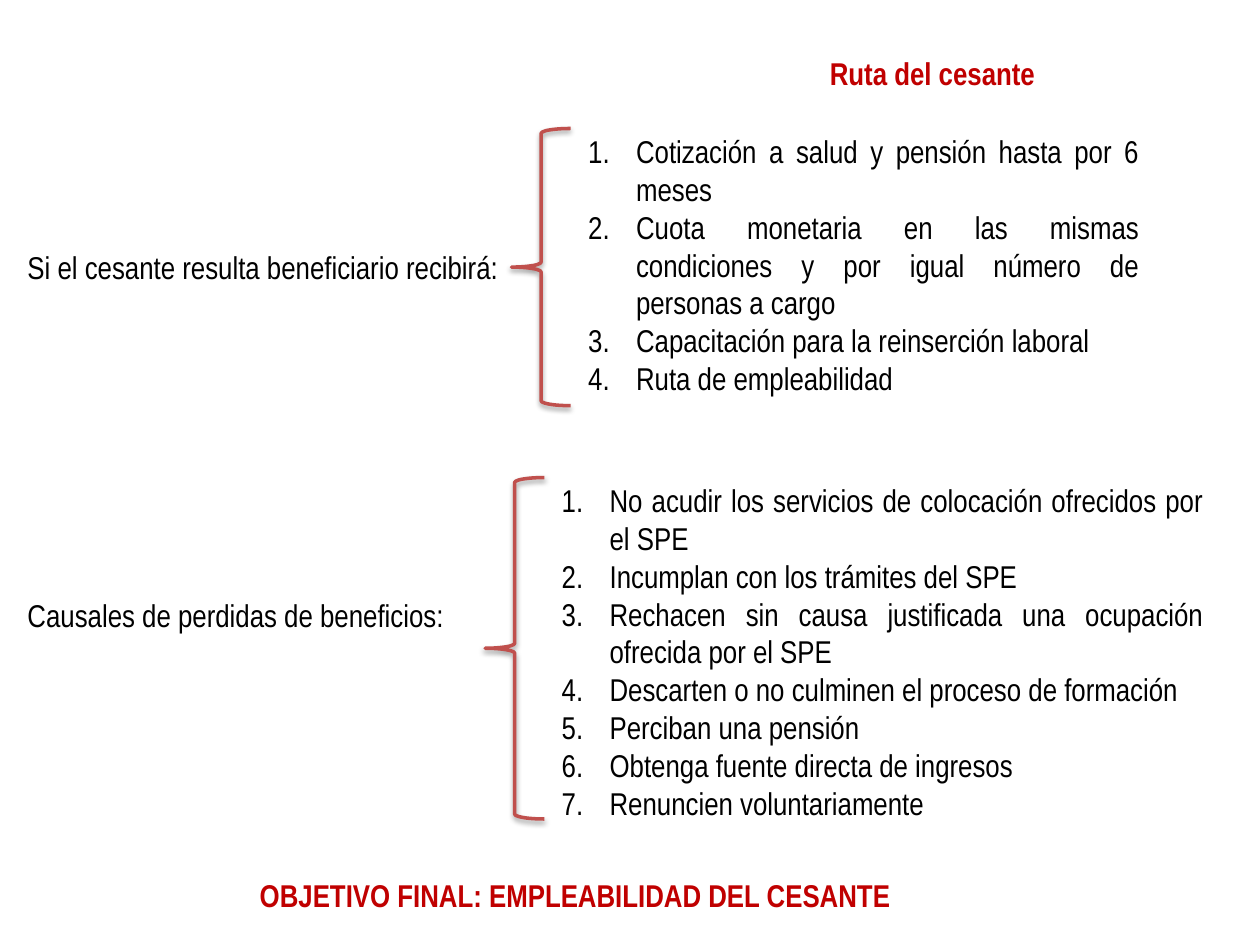
from dataclasses import dataclass

from lxml.etree import SubElement
from pptx import Presentation
from pptx.dml.color import RGBColor
from pptx.enum.shapes import MSO_SHAPE
from pptx.enum.text import MSO_AUTO_SIZE, PP_ALIGN
from pptx.oxml.ns import qn
from pptx.util import Inches, Pt


@dataclass(frozen=True)
class Theme:
    font: str = "Arial Narrow"
    size: float = 18
    ink: str = "000000"
    accent: str = "C00000"
    brace: str = "C0504D"
    brace_width: float = 2
    shadow: str = "000000"


@dataclass(frozen=True)
class Box:
    """Place on the slide, in grid columns and rows."""
    left: float
    top: float
    width: float
    height: float

    def inches(self):
        return [Inches(value * CELL)
                for value in (self.left, self.top, self.width, self.height)]


THEME = Theme()
CELL = 0.1  # inches
COLUMNS, ROWS = 100, 75
LINE_HEIGHT = 4  # rows of a one-line text
BRACE_WIDTH = 4.7
LABEL_LEFT, LABEL_WIDTH = 1.2, 41.7
INDENT = Inches(0.38)

BENEFITS = [
    "Cotización a salud y pensión hasta por 6 meses",
    "Cuota monetaria en las mismas condiciones y por igual número de personas a cargo",
    "Capacitación para la reinserción laboral",
    "Ruta de empleabilidad",
]
CAUSES = [
    "No acudir los servicios de colocación ofrecidos por el SPE",
    "Incumplan con los trámites del SPE",
    "Rechacen sin causa justificada una ocupación ofrecida por el SPE",
    "Descarten o no culminen el proceso de formación",
    "Perciban una pensión",
    "Obtenga fuente directa de ingresos",
    "Renuncien voluntariamente",
]


def number_paragraph(para):
    properties = para._p.get_or_add_pPr()
    properties.set("marL", str(INDENT))
    properties.set("indent", str(-INDENT))
    SubElement(properties, qn("a:buFont"), typeface="+mj-lt")
    SubElement(properties, qn("a:buAutoNum"), type="arabicPeriod")


def add_text(page, box, lines, color=THEME.ink, bold=False,
             align=PP_ALIGN.LEFT, numbered=False):
    frame = page.shapes.add_textbox(*box.inches()).text_frame
    frame.word_wrap = True
    frame.auto_size = MSO_AUTO_SIZE.SHAPE_TO_FIT_TEXT
    for index, line in enumerate(lines):
        para = frame.add_paragraph() if index else frame.paragraphs[0]
        para.alignment = align
        if numbered:
            number_paragraph(para)
        span = para.add_run()
        span.text = line
        span.font.name = THEME.font
        span.font.size = Pt(THEME.size)
        span.font.bold = bold
        span.font.color.rgb = RGBColor.from_string(color)


def add_brace(page, box):
    brace = page.shapes.add_shape(MSO_SHAPE.LEFT_BRACE, *box.inches())
    brace.fill.background()
    brace.line.color.rgb = RGBColor.from_string(THEME.brace)
    brace.line.width = Pt(THEME.brace_width)
    # Soft shadow straight below the line
    brace.shadow.inherit = False
    effects = brace._element.spPr.find(qn("a:effectLst"))
    shadow = SubElement(effects, qn("a:outerShdw"), blurRad=str(Pt(3.1)),
                        dist=str(Pt(1.6)), dir="5400000", rotWithShape="0")
    color = SubElement(shadow, qn("a:srgbClr"), val=THEME.shadow)
    SubElement(color, qn("a:alpha"), val="38000")


def add_heading(page, box, text):
    add_text(page, box, [text], color=THEME.accent, bold=True,
             align=PP_ALIGN.CENTER)


def add_group(page, box, label, label_top, brace_height, items):
    """Label on the left, then a brace and its numbered list inside the box."""
    add_text(page, Box(LABEL_LEFT, box.top + label_top, LABEL_WIDTH, LINE_HEIGHT),
             [label])
    add_brace(page, Box(box.left, box.top + 0.2, BRACE_WIDTH, brace_height))
    list_offset = BRACE_WIDTH + 0.4
    add_text(page, Box(box.left + list_offset, box.top,
                       box.width - list_offset, box.height),
             items, align=PP_ALIGN.JUSTIFY, numbered=True)


def main():
    deck = Presentation()
    deck.slide_width = Inches(COLUMNS * CELL)
    deck.slide_height = Inches(ROWS * CELL)
    page = deck.slides.add_slide(deck.slide_layouts[6])

    # Title
    add_heading(page, Box(53.9, 3.8, 40.2, LINE_HEIGHT), "Ruta del cesante")
    # Benefits received
    add_group(page, Box(40.6, 10, 50.8, 22.2),
              "Si el cesante resulta beneficiario recibirá:", 9.2, 22, BENEFITS)
    # Causes of loss
    add_group(page, Box(38.5, 37.7, 58, 28.3),
              "Causales de perdidas de beneficios:", 9.1, 27.1, CAUSES)
    # Final goal
    add_heading(page, Box(5.1, 69, 81.1, LINE_HEIGHT),
                "OBJETIVO FINAL: EMPLEABILIDAD DEL CESANTE")

    deck.save("out.pptx")


if __name__ == "__main__":
    main()
